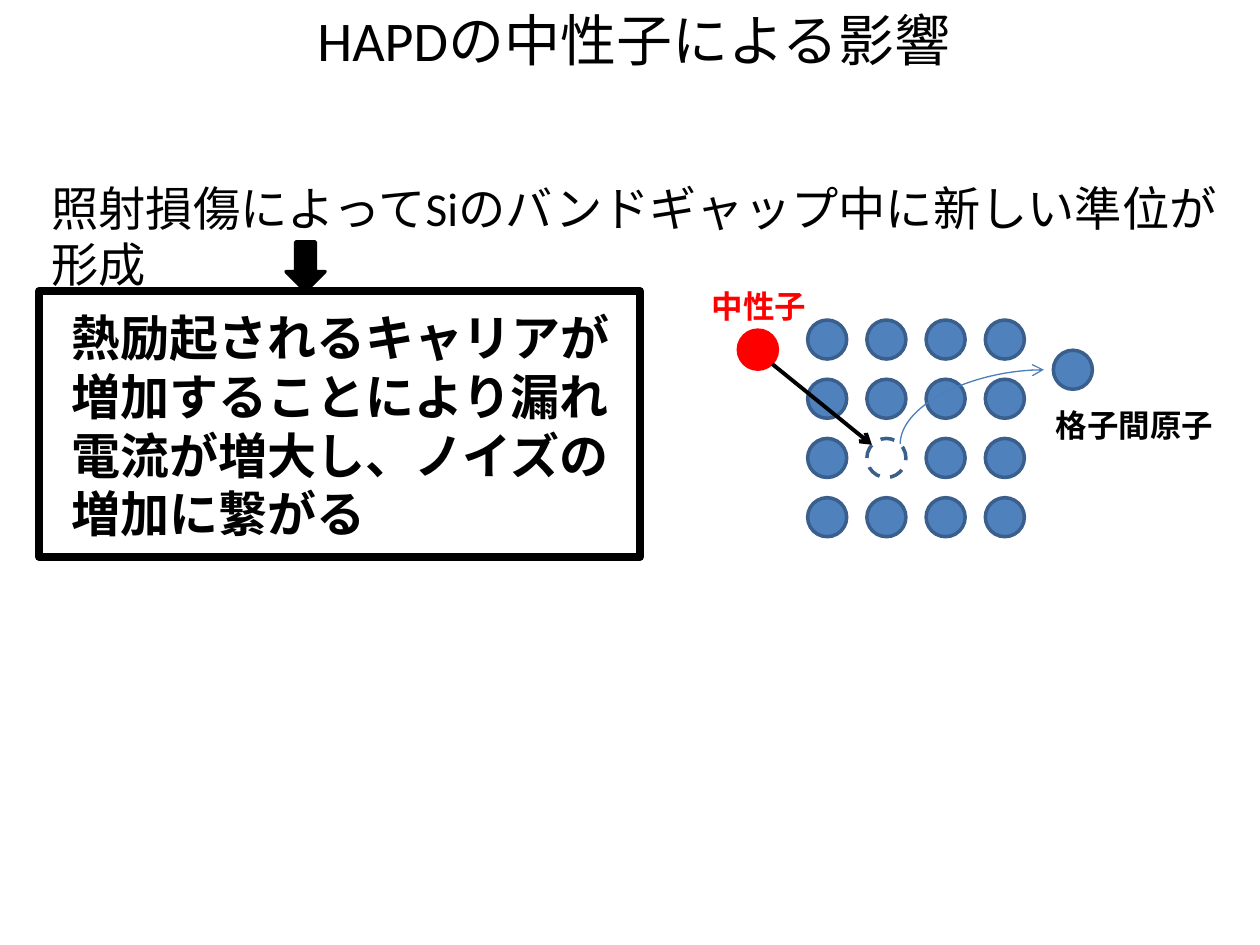
"""Build a slide on how neutrons affect the HAPD, with a crystal lattice diagram."""
from lxml.etree import SubElement
from pptx import Presentation
from pptx.dml.color import RGBColor
from pptx.enum.dml import MSO_LINE
from pptx.enum.shapes import MSO_CONNECTOR as Link, MSO_SHAPE as Shape
from pptx.enum.text import MSO_ANCHOR as Anchor, PP_ALIGN as Align
from pptx.oxml.ns import qn
from pptx.util import Inches, Pt

COLORS = {
    "black": "000000",
    "neutron": "FF0000",
    "atom": "4F81BD",
    "atom_edge": "3A5F8C",
    "path": "4B7EBC",
}
FONT = "Calibri"

TITLE = ("HAPDの中性子による影響", (0.31, 0, 9.45, 0.62), 32, "black", False)
TEXTS = [
    ("照射損傷によってSiのバンドギャップ中に新しい準位が形成",
     (0.31, 1.37, 9.69, 0.56), 27, "black", False),
    ("熱励起されるキャリアが増加することにより漏れ電流が増大し、ノイズの増加に繋がる",
     (0.47, 2.39, 4.77, 1.99), 28, "black", True),
    ("中性子", (5.55, 2.23, 1.02, 0.4), 18, "neutron", True),
    ("格子間原子", (8.28, 3.17, 1.72, 0.4), 18, "black", True),
]

DOWN_ARROW = (2.27, 1.92, 0.31, 0.39)
EFFECT_FRAME = (0.31, 2.31, 4.77, 2.11)
LATTICE_LEFT, LATTICE_TOP, LATTICE_STEP, LATTICE_SIZE = 6.41, 2.54, 0.47, 4
VACANCY = (2, 1)
ATOM_SIZE = 0.31
INTERSTITIAL = (8.36, 2.78)
NEUTRON = (5.86, 2.62)
NEUTRON_TRACK = (6.13, 2.89, 6.92, 3.53)
EJECTION_BOX = (7.42, 2.66, 0.59, 1.14)


def color(name):
    return RGBColor.from_string(COLORS[name])


def add_text(slide, text, box, size, ink, bold):
    frame = slide.shapes.add_textbox(*map(Inches, box)).text_frame
    frame.word_wrap = True
    frame.text = text
    font = frame.paragraphs[0].runs[0].font
    font.name, font.size, font.bold = FONT, Pt(size), bold
    font.color.rgb = color(ink)
    return frame


def add_outlined(slide, kind, box, fill, edge, width=2):
    shape = slide.shapes.add_shape(kind, *map(Inches, box))
    shape.shadow.inherit = False
    if fill:
        shape.fill.solid()
        shape.fill.fore_color.rgb = color(fill)
    else:
        shape.fill.background()
    shape.line.color.rgb = color(edge)
    shape.line.width = Pt(width)
    return shape


def add_particle(slide, left, top, fill="atom", edge="atom_edge"):
    box = (left, top, ATOM_SIZE, ATOM_SIZE)
    return add_outlined(slide, Shape.OVAL, box, fill, edge)


def add_arrow(slide, kind, ends, ink, width):
    arrow = slide.shapes.add_connector(kind, *map(Inches, ends))
    arrow.line.color.rgb = color(ink)
    arrow.line.width = Pt(width)
    properties = arrow._element.spPr
    SubElement(properties.find(qn("a:ln")), qn("a:tailEnd"), type="arrow")
    SubElement(properties, qn("a:effectLst"))
    return properties


def add_lattice(slide):
    for row in range(LATTICE_SIZE):
        for column in range(LATTICE_SIZE):
            left = LATTICE_LEFT + column * LATTICE_STEP
            top = LATTICE_TOP + row * LATTICE_STEP
            if (row, column) == VACANCY:
                vacancy = add_particle(slide, left, top, fill=None)
                vacancy.line.dash_style = MSO_LINE.DASH
            else:
                add_particle(slide, left, top)


def add_ejection(slide):
    left, top, width, height = EJECTION_BOX
    ends = (left + width, top + height, left, top)
    properties = add_arrow(slide, Link.CURVE, ends, "path", 0.75)
    properties.find(qn("a:xfrm")).set("rot", str(90 * 60000))
    properties.find(qn("a:prstGeom")).set("prst", "curvedConnector2")


def main():
    deck = Presentation()
    deck.slide_width, deck.slide_height = Inches(10), Inches(7.5)
    slide = deck.slides.add_slide(deck.slide_layouts[6])

    title = add_text(slide, *TITLE)
    title.vertical_anchor = Anchor.MIDDLE
    title.paragraphs[0].alignment = Align.CENTER

    add_outlined(slide, Shape.DOWN_ARROW, DOWN_ARROW, "black", "black")
    add_outlined(slide, Shape.RECTANGLE, EFFECT_FRAME, None, "black", 4.5)
    add_lattice(slide)
    add_ejection(slide)
    add_particle(slide, *INTERSTITIAL)
    add_particle(slide, *NEUTRON, fill="neutron", edge="neutron")
    add_arrow(slide, Link.STRAIGHT, NEUTRON_TRACK, "black", 2.25)
    for item in TEXTS:
        add_text(slide, *item)

    deck.save("out.pptx")


if __name__ == "__main__":
    main()
